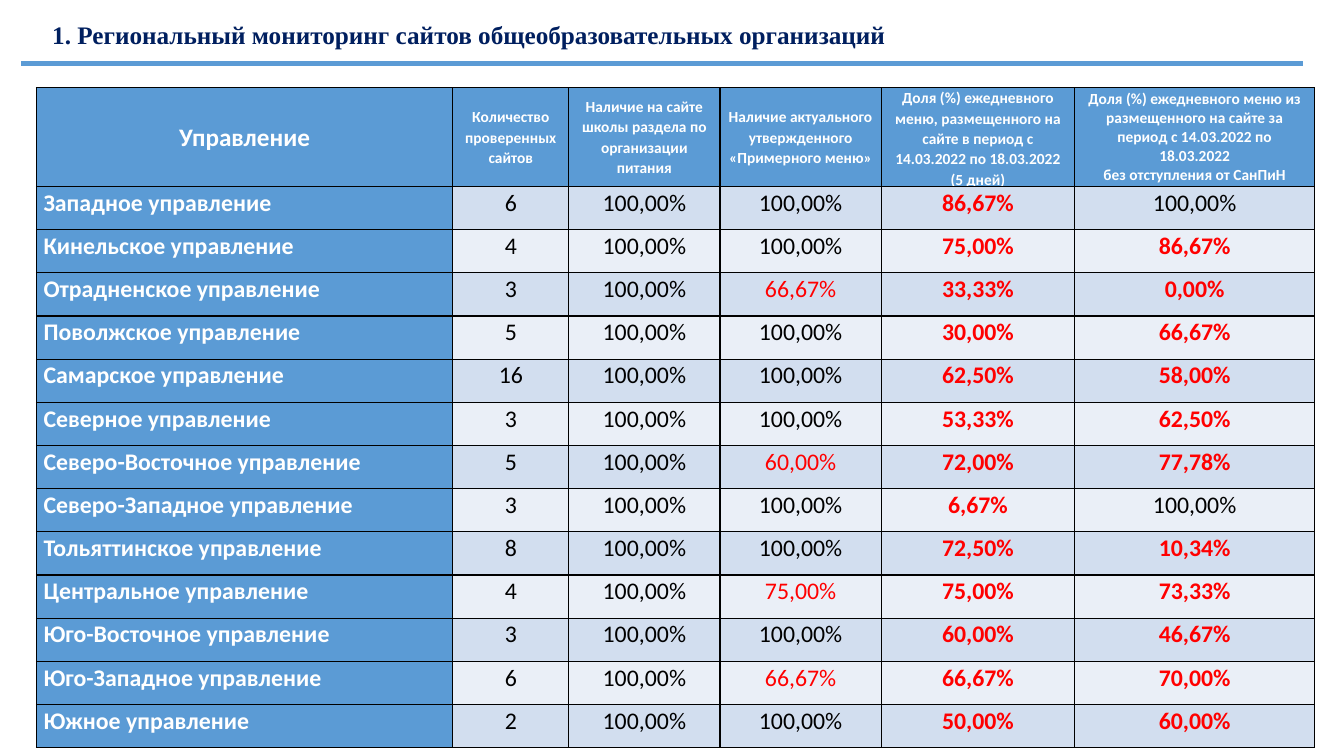
from lxml import etree
from pptx import Presentation
from pptx.dml.color import RGBColor
from pptx.enum.shapes import MSO_CONNECTOR
from pptx.enum.text import MSO_ANCHOR, PP_ALIGN
from pptx.oxml.ns import qn
from pptx.util import Pt

STRAIGHT = MSO_CONNECTOR.STRAIGHT
TOP, MIDDLE = MSO_ANCHOR.TOP, MSO_ANCHOR.MIDDLE
LEFT, CENTER = PP_ALIGN.LEFT, PP_ALIGN.CENTER

TITLE = "1. Региональный мониторинг сайтов общеобразовательных организаций"
HEADERS = [
    "Управление",
    "Количество проверенных сайтов",
    "Наличие на сайте школы раздела по организации питания",
    "Наличие актуального утвержденного «Примерного меню»",
    "Доля (%) ежедневного меню, размещенного на сайте в период с "
    "14.03.2022 по 18.03.2022 (5 дней)",
    "Доля (%) ежедневного меню из размещенного на сайте за период с "
    "14.03.2022 по 18.03.2022\nбез отступления от СанПиН",
]
FULL = "100,00%"
ROWS = [
    ("Западное управление", "6", FULL, FULL, "86,67%", FULL),
    ("Кинельское управление", "4", FULL, FULL, "75,00%", "86,67%"),
    ("Отрадненское управление", "3", FULL, "66,67%", "33,33%", "0,00%"),
    ("Поволжское управление", "5", FULL, FULL, "30,00%", "66,67%"),
    ("Самарское управление", "16", FULL, FULL, "62,50%", "58,00%"),
    ("Северное управление", "3", FULL, FULL, "53,33%", "62,50%"),
    ("Северо-Восточное управление", "5", FULL, "60,00%", "72,00%", "77,78%"),
    ("Северо-Западное управление", "3", FULL, FULL, "6,67%", FULL),
    ("Тольяттинское управление", "8", FULL, FULL, "72,50%", "10,34%"),
    ("Центральное управление", "4", FULL, "75,00%", "75,00%", "73,33%"),
    ("Юго-Восточное управление", "3", FULL, FULL, "60,00%", "46,67%"),
    ("Юго-Западное управление", "6", FULL, "66,67%", "66,67%", "70,00%"),
    ("Южное управление", "2", FULL, FULL, "50,00%", "60,00%"),
]

THEME = {
    "blue": "5B9BD5", "navy": "001F5F", "white": "FFFFFF", "black": "000000",
    "red": "FF0000", "bands": ("D2DEEF", "EAEFF7"),
    "title_font": "Times New Roman", "table_font": "Calibri",
    "title": 18, "corner": 18, "header": 11, "body": 17,
    "rule": 3, "border": 1, "spacing": 1.07,
}
COL_WIDTHS = [297.4, 82.8, 108, 115.2, 138.2, 171.4]
MARGINS = [5, 5, 8.6, 8, 8, 8]
HEADER_HEIGHT, ROW_HEIGHT = 70.6, 30.85
TABLE_LEFT, TABLE_TOP = 26.1, 62.6


def rgb(value):
    return RGBColor.from_string(value)


def style_run(r, font, size, color, bold):
    r.font.name, r.font.size, r.font.bold = font, Pt(size), bold
    r.font.color.rgb = rgb(color)


def add_borders(cell):
    tc_pr = cell._tc.get_or_add_tcPr()
    for side in ("a:lnL", "a:lnR", "a:lnT", "a:lnB"):
        ln = etree.SubElement(tc_pr, qn(side), w=str(Pt(THEME["border"])))
        fill = etree.SubElement(ln, qn("a:solidFill"))
        etree.SubElement(fill, qn("a:srgbClr"), val=THEME["black"])


def fill_cell(cell, text, fill, size, color, bold, align, anchor, margin, spacing):
    add_borders(cell)
    cell.fill.solid()
    cell.fill.fore_color.rgb = rgb(fill)
    cell.margin_left = cell.margin_right = Pt(margin)
    cell.margin_top = cell.margin_bottom = 0
    cell.vertical_anchor = anchor
    cell.text_frame.text = text
    for p in cell.text_frame.paragraphs:
        p.alignment, p.line_spacing = align, spacing
        for r in p.runs:
            style_run(r, THEME["table_font"], size, color, bold)


def add_title(s):
    tf = s.shapes.add_textbox(Pt(30.2), Pt(10.1), Pt(905.8), Pt(28.8)).text_frame
    tf.word_wrap, tf.vertical_anchor = True, MIDDLE
    tf.text = TITLE
    style_run(tf.paragraphs[0].runs[0], THEME["title_font"], THEME["title"],
              THEME["navy"], True)
    rule = s.shapes.add_connector(STRAIGHT, Pt(15.1), Pt(45.3), Pt(931), Pt(45.3))
    rule.line.color.rgb, rule.line.width = rgb(THEME["blue"]), Pt(THEME["rule"])
    etree.SubElement(rule._element.spPr, qn("a:effectLst"))


def add_monitoring_table(s):
    heights = [HEADER_HEIGHT] + [ROW_HEIGHT] * len(ROWS)
    table = s.shapes.add_table(
        len(heights), len(COL_WIDTHS), Pt(TABLE_LEFT), Pt(TABLE_TOP),
        Pt(sum(COL_WIDTHS)), Pt(sum(heights))).table
    for column, width in zip(table.columns, COL_WIDTHS):
        column.width = Pt(width)
    for row, height in zip(table.rows, heights):
        row.height = Pt(height)

    last = len(HEADERS) - 1
    for j, text in enumerate(HEADERS):
        size = THEME["header"] if j else THEME["corner"]
        spacing = 1.0 if j == last else THEME["spacing"]
        fill_cell(table.cell(0, j), text, THEME["blue"], size, THEME["white"],
                  True, CENTER, MIDDLE, MARGINS[0], spacing)

    for i, values in enumerate(ROWS):
        for j, text in enumerate(values):
            below = j > 1 and text != FULL
            if j == 0:
                fill, color, bold, align = THEME["blue"], THEME["white"], True, LEFT
            else:
                fill, align = THEME["bands"][i % 2], CENTER
                color = THEME["red"] if below else THEME["black"]
                bold = below and j > 3
            fill_cell(table.cell(i + 1, j), text, fill, THEME["body"], color,
                      bold, align, TOP, MARGINS[j], THEME["spacing"])


def main():
    prs = Presentation()
    prs.slide_width, prs.slide_height = Pt(960), Pt(540)
    s = prs.slides.add_slide(prs.slide_layouts[6])
    add_title(s)
    add_monitoring_table(s)
    prs.save("out.pptx")


if __name__ == "__main__":
    main()
